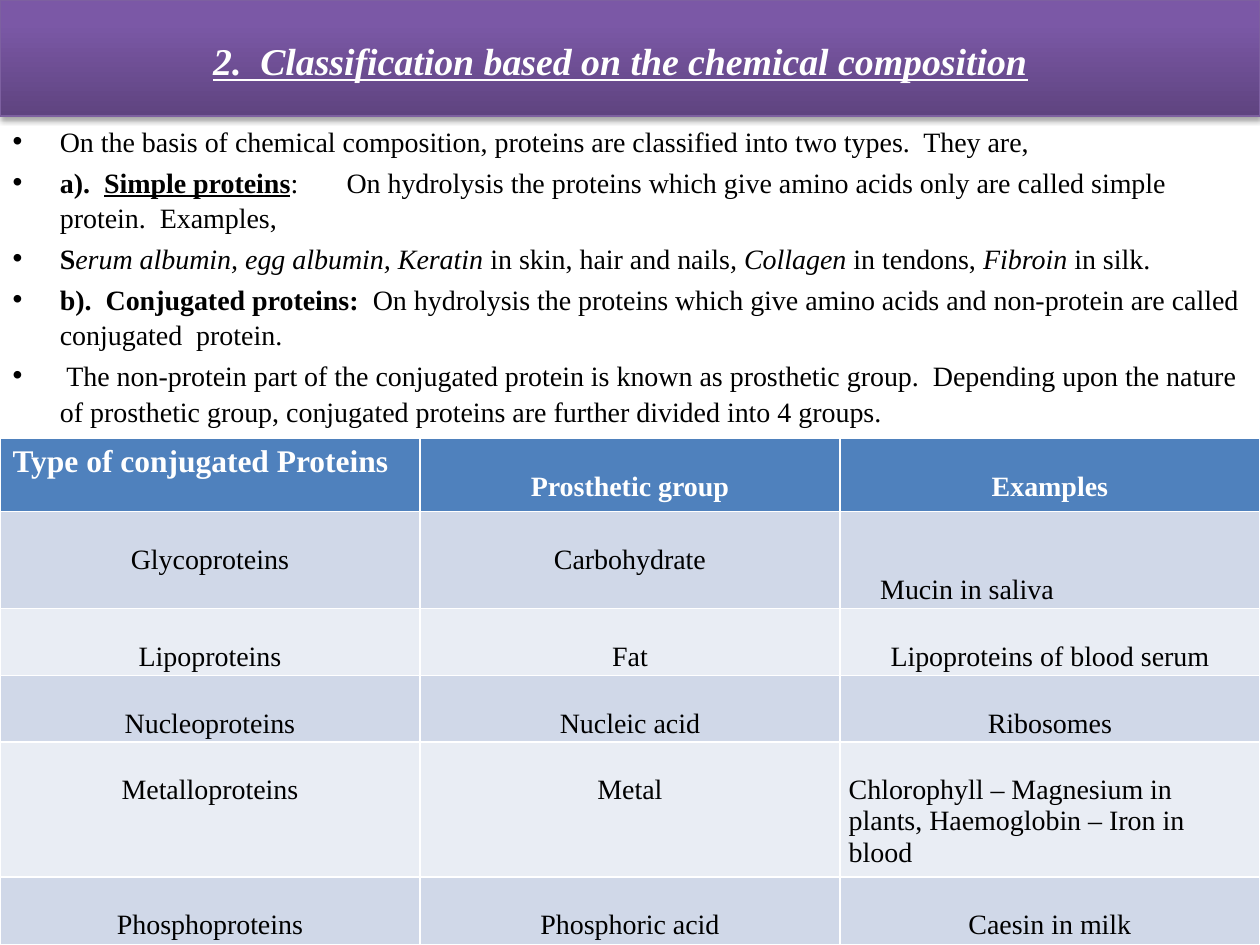
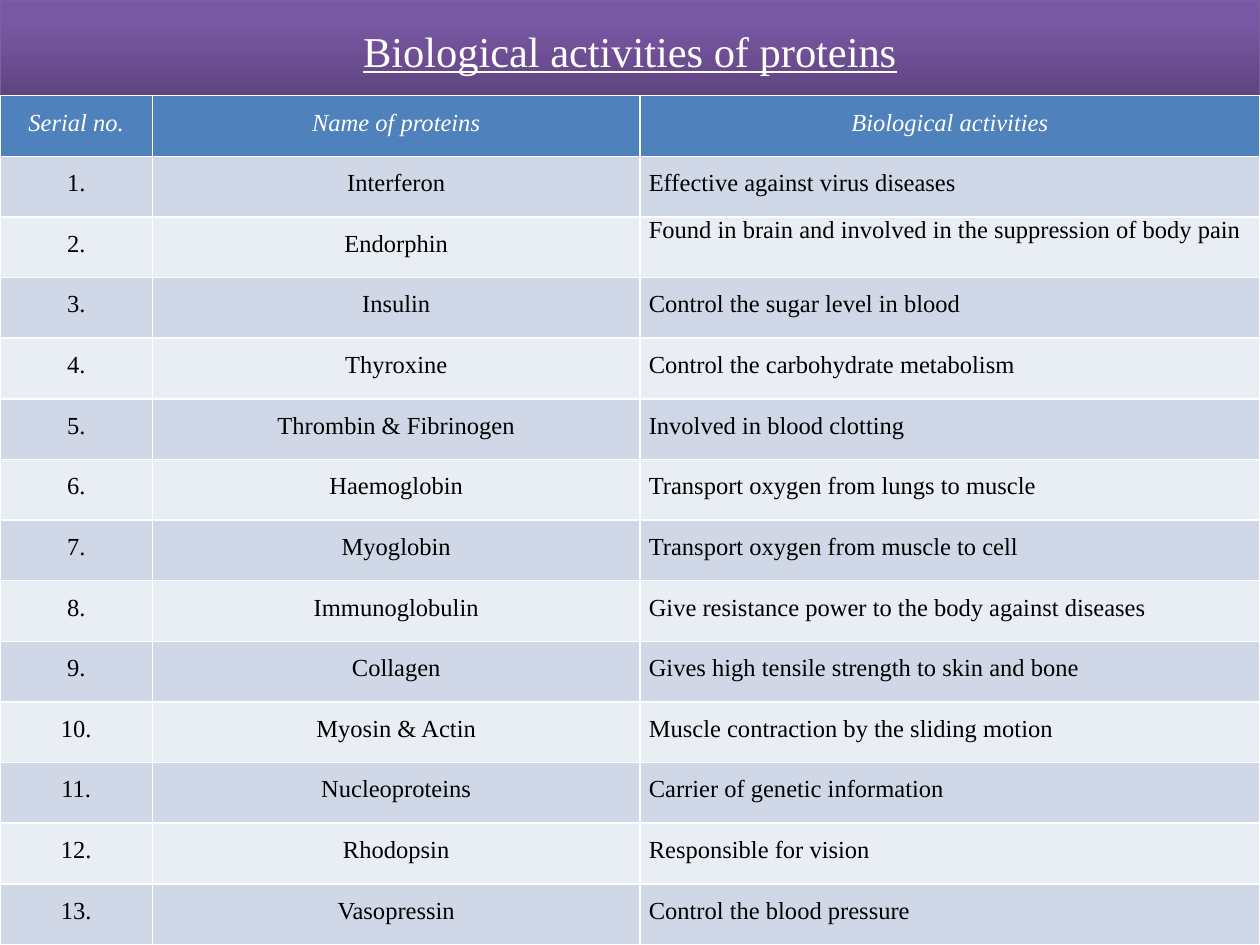
"""Builds two slides on the classification and biological activities of proteins."""
from dataclasses import dataclass

from lxml.etree import SubElement
from pptx import Presentation
from pptx.dml.color import RGBColor as RGB
from pptx.enum.text import MSO_ANCHOR as Anchor, MSO_AUTO_SIZE as AutoSize, PP_ALIGN as Align
from pptx.oxml import parse_xml
from pptx.oxml.ns import nsdecls, qn
from pptx.util import Inches, Pt


@dataclass(frozen=True)
class Theme:
    font: str = "Times New Roman"
    white: str = "FFFFFF"
    black: str = "000000"
    band_dark: str = "5F4480"
    band_mid: str = "7B58A6"
    band_light: str = "7C57A8"
    band_line: str = "7D60A0"
    header: str = "4F81BD"
    stripes: tuple = ("D0D8E8", "E9EDF4")
    body_size: float = 16
    first_header_size: float = 18
    list_size: float = 14


theme = Theme()


def write(paragraph, text, size=theme.body_size, color=theme.black, bold=False,
          italic=False, underline=False):
    run = paragraph.add_run()
    run.text = text
    font = run.font
    font.name, font.size, font.color.rgb = theme.font, Pt(size), RGB.from_string(color)
    font.bold, font.italic, font.underline = bold, italic, underline


def style_band(band, height):
    band.left, band.top, band.width, band.height = 0, 0, Inches(10), Inches(height)
    stops = "".join(
        f'<a:gs pos="{position * 1000}"><a:srgbClr val="{color}"/></a:gs>'
        for position, color in ((0, theme.band_dark), (80, theme.band_mid), (100, theme.band_light)))
    properties = band.element.spPr
    properties.append(parse_xml(
        f'<a:gradFill {nsdecls("a")} rotWithShape="1"><a:gsLst>{stops}</a:gsLst>'
        '<a:lin ang="16200000" scaled="0"/></a:gradFill>'))
    band.line.color.rgb = RGB.from_string(theme.band_line)
    band.line.width = Pt(0.75)
    properties.append(parse_xml(
        f'<a:effectLst {nsdecls("a")}><a:outerShdw blurRad="{Pt(3.1)}" dist="{Pt(1.8)}" '
        'dir="5400000" rotWithShape="0"><a:srgbClr val="000000"><a:alpha val="35000"/>'
        '</a:srgbClr></a:outerShdw></a:effectLst>'))
    frame = band.text_frame
    frame.auto_size = AutoSize.NONE
    frame.vertical_anchor = Anchor.MIDDLE
    frame.margin_top = Inches(0.09)


bold, italic = {"bold": True}, {"italic": True}
composition_points = [
    [("On the basis of chemical composition, proteins are classified into two types.  They are,", {})],
    [("a).  ", bold), ("Simple proteins", {"bold": True, "underline": True}),
     (":\tOn hydrolysis the proteins which give amino acids only are called simple  protein.  "
      "Examples,", {})],
    [("S", bold), ("erum albumin, egg albumin, Keratin ", italic), ("in skin, hair and nails", {}),
     (", Collagen", italic), (" in tendons,", {}), (" Fibroin", italic), (" in silk.", {})],
    [("b).  Conjugated proteins:  ", bold),
     ("On hydrolysis the proteins which give amino acids and non-protein are called "
      "conjugated  protein.", {})],
    [(" The non-protein part of the conjugated protein is known as prosthetic group.  Depending "
      "upon the nature of prosthetic group, conjugated proteins are further divided into 4 groups.", {})],
]
conjugated_proteins = [
    ("Type of conjugated Proteins", "Prosthetic group", "Examples"),
    ("Glycoproteins", "Carbohydrate", "Mucin in saliva"),
    ("Lipoproteins", "Fat", "Lipoproteins of blood serum"),
    ("Nucleoproteins", "Nucleic acid", "Ribosomes"),
    ("Metalloproteins", "Metal", "Chlorophyll – Magnesium in plants, Haemoglobin – Iron in blood"),
    ("Phosphoproteins", "Phosphoric acid", "Caesin in milk"),
]
activities = [
    ("Interferon", "Effective against virus diseases"),
    ("Endorphin", "Found in brain and involved in the suppression of body pain"),
    ("Insulin", "Control the sugar level in blood"),
    ("Thyroxine", "Control the carbohydrate metabolism"),
    ("Thrombin & Fibrinogen", "Involved in blood clotting"),
    ("Haemoglobin", "Transport oxygen from lungs to muscle"),
    ("Myoglobin", "Transport oxygen from muscle to cell"),
    ("Immunoglobulin", "Give resistance power to the body against diseases"),
    ("Collagen", "Gives high tensile strength to skin and bone"),
    ("Myosin & Actin", "Muscle contraction by the sliding motion"),
    ("Nucleoproteins", "Carrier of genetic information"),
    ("Rhodopsin", "Responsible for vision"),
    ("Vasopressin", "Control the blood pressure"),
]
numbered_activities = [("Serial no.", "Name of proteins", "Biological activities")] + [
    (f"{number}.", *activity) for number, activity in enumerate(activities, 1)]

topics = [
    dict(layout=1, title="2.  Classification based on the chemical composition",
         title_format=dict(size=21.6, bold=True, italic=True, underline=True),
         title_right=0.25, band=0.92, points=composition_points,
         rows=conjugated_proteins, top=3.48, widths=(10 / 3,) * 3,
         heights=(0.58, 0.77, 0.53, 0.53, 1.07, 0.54),
         size=theme.body_size, header_format=bold, spacing=1, cell_top=0.26,
         left_cells={(0, 0), (1, 2), (4, 2)},
         special={(0, 0): dict(size=theme.first_header_size, left=0.1, top=0.05),
                  (1, 2): dict(left=0.32, top=0.38, spacing=1.5)}),
    dict(layout=5, title="Biological activities of proteins",
         title_format=dict(size=24.3, underline=True),
         title_right=0.1, band=0.76, points=[],
         rows=numbered_activities, top=0.76, widths=(1.21, 3.87, 4.92),
         heights=(6.74 / 14,) * 14,
         size=theme.list_size, header_format=italic, spacing=1.5, cell_top=0,
         left_cells={(row, 2) for row in range(1, 14)},
         special={(2, 2): dict(spacing=1)}),
]

deck = Presentation()
deck.slide_width, deck.slide_height = Inches(10), Inches(7.5)

for topic in topics:
    slide = deck.slides.add_slide(deck.slide_layouts[topic["layout"]])
    heading = slide.shapes.title
    style_band(heading, topic["band"])
    heading.text_frame.margin_right = Inches(topic["title_right"])
    heading_line = heading.text_frame.paragraphs[0]
    heading_line.alignment = Align.CENTER
    write(heading_line, topic["title"], color=theme.white, **topic["title_format"])

    if topic["points"]:
        explanation = slide.placeholders[1]
        explanation.left, explanation.top = 0, Inches(topic["band"])
        explanation.width, explanation.height = Inches(10), Inches(7.5 - topic["band"])
        explanation.text_frame.auto_size = AutoSize.NONE
        for index, pieces in enumerate(topic["points"]):
            frame = explanation.text_frame
            point = frame.add_paragraph() if index else frame.paragraphs[0]
            point.line_spacing = 1.06
            point.space_before = Pt(3 if index else 0)
            if any("\t" in text for text, _ in pieces):
                tabs = SubElement(point._p.get_or_add_pPr(), qn("a:tabLst"))
                SubElement(tabs, qn("a:tab"), pos=str(Inches(2.65)), algn="l")
            point.font.size = Pt(theme.body_size)
            for text, text_format in pieces:
                write(point, text, **text_format)

    rows, widths, heights = topic["rows"], topic["widths"], topic["heights"]
    table = slide.shapes.add_table(len(rows), len(widths), 0, Inches(topic["top"]),
                                   Inches(10), Inches(sum(heights))).table
    for column, width in zip(table.columns, widths):
        column.width = Inches(width)
    for r, (entries, height) in enumerate(zip(rows, heights)):
        table.rows[r].height = Inches(height)
        for c, text in enumerate(entries):
            cell, special = table.cell(r, c), topic["special"].get((r, c), {})
            for side in ("lnL", "lnR", "lnT", "lnB"):
                cell._tc.get_or_add_tcPr().append(parse_xml(
                    f'<a:{side} {nsdecls("a")} w="{Pt(1)}"><a:solidFill>'
                    f'<a:srgbClr val="{theme.white}"/></a:solidFill></a:{side}>'))
            cell.fill.solid()
            cell.fill.fore_color.rgb = RGB.from_string(
                theme.stripes[(r - 1) % 2] if r else theme.header)
            cell.margin_left = Inches(special.get("left", 0.07))
            cell.margin_top = Inches(special.get("top", topic["cell_top"]))
            cell.margin_right, cell.margin_bottom = Inches(0.07), 0
            entry = cell.text_frame.paragraphs[0]
            entry.alignment = Align.LEFT if (r, c) in topic["left_cells"] else Align.CENTER
            entry.line_spacing = float(special.get("spacing", topic["spacing"]))
            write(entry, text, size=special.get("size", topic["size"]),
                  color=theme.black if r else theme.white,
                  **({} if r else topic["header_format"]))

deck.save("out.pptx")
